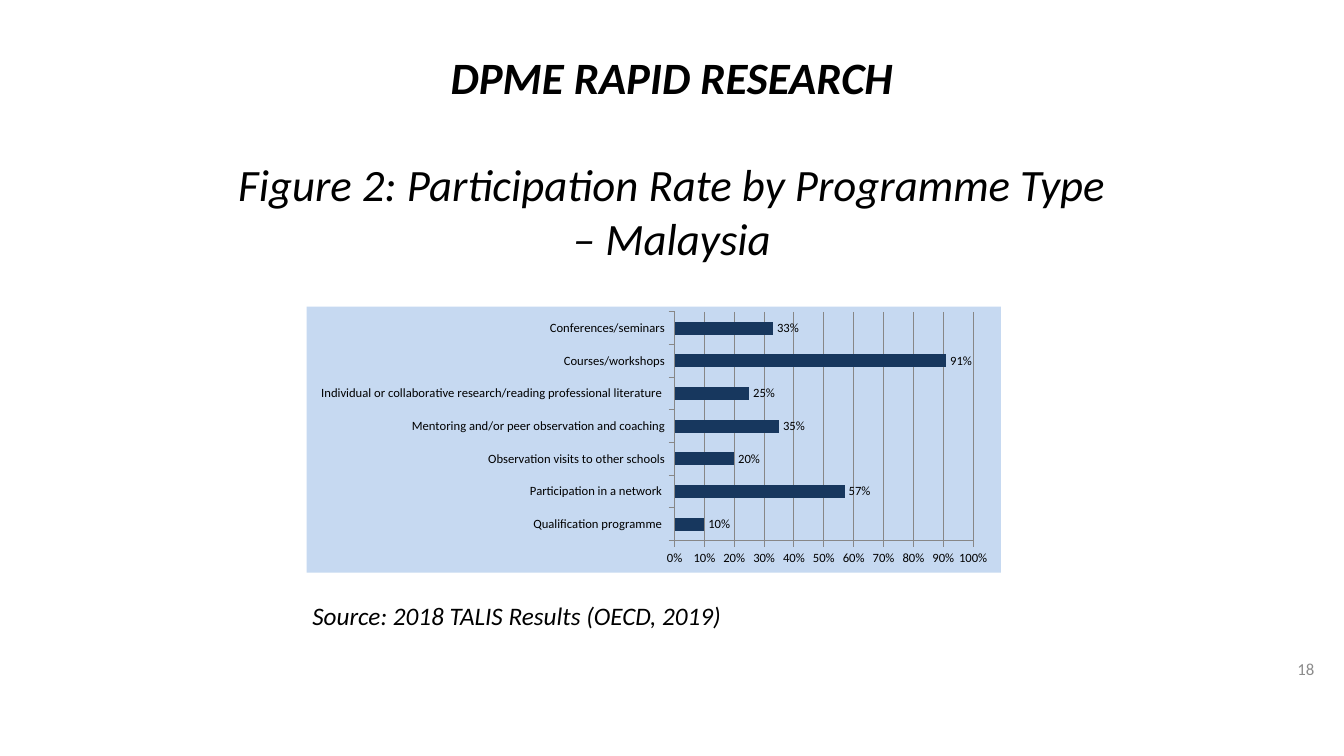
import pptx
import pptx.chart.data
import pptx.dml.color
import pptx.enum.chart
import pptx.enum.text
import pptx.oxml
import pptx.oxml.ns
import pptx.util

Pt = pptx.util.Pt
RGBColor = pptx.dml.color.RGBColor
ALIGN = pptx.enum.text.PP_ALIGN
ANCHOR = pptx.enum.text.MSO_ANCHOR

BLACK = RGBColor(0x00, 0x00, 0x00)
GREY = RGBColor(0x8C, 0x8C, 0x8C)
GRID = RGBColor(0x87, 0x87, 0x87)
NAVY = RGBColor(0x17, 0x37, 0x5E)
PALE_BLUE = RGBColor(0xC6, 0xD9, 0xF1)
FONT = "Calibri"

PARTICIPATION = [
    ("Qualification programme ", 0.10),
    ("Participation in a network ", 0.57),
    ("Observation visits to other schools", 0.20),
    ("Mentoring and/or peer observation and coaching", 0.35),
    ("Individual or collaborative research/reading professional literature ", 0.25),
    ("Courses/workshops", 0.91),
    ("Conferences/seminars", 0.33),
]


def set_font(font, size, color=BLACK, bold=False, italic=False):
    font.name = FONT
    font.size = Pt(size)
    font.color.rgb = color
    font.bold = bold
    font.italic = italic


def fill_title(title, heading, caption):
    title.left, title.top, title.width, title.height = Pt(156), Pt(21.6), Pt(648), Pt(181)
    text_frame = title.text_frame
    text_frame.text = f"{heading}\n{caption}"
    text_frame.word_wrap = True
    text_frame.auto_size = pptx.enum.text.MSO_AUTO_SIZE.NONE
    text_frame.vertical_anchor = ANCHOR.MIDDLE
    for paragraph, bold in zip(text_frame.paragraphs, (True, False)):
        paragraph.alignment = ALIGN.CENTER
        set_font(paragraph.runs[0].font, 32, bold=bold, italic=True)
    text_frame.paragraphs[1].space_before = Pt(38.4)


def add_text(slide, text, left, top, width, height, size, alignment, color=BLACK, italic=False):
    text_frame = slide.shapes.add_textbox(Pt(left), Pt(top), Pt(width), Pt(height)).text_frame
    text_frame.text = text
    text_frame.word_wrap = True
    text_frame.vertical_anchor = ANCHOR.MIDDLE
    paragraph = text_frame.paragraphs[0]
    paragraph.alignment = alignment
    set_font(paragraph.runs[0].font, size, color, italic=italic)


def style_axis(axis):
    axis.major_tick_mark = pptx.enum.chart.XL_TICK_MARK.OUTSIDE
    axis.minor_tick_mark = pptx.enum.chart.XL_TICK_MARK.NONE
    axis.format.line.color.rgb = GRID
    axis.format.line.width = Pt(0.75)


def set_chart_background(chart, color):
    area = pptx.oxml.parse_xml(
        f'<c:spPr {pptx.oxml.ns.nsdecls("c", "a")}><a:solidFill><a:srgbClr val="{color}"/>'
        "</a:solidFill><a:ln><a:noFill/></a:ln></c:spPr>"
    )
    chart.element.find(pptx.oxml.ns.qn("c:chart")).addnext(area)


def set_plot_layout(chart, x, y, width, height):
    plot_area = chart.element.find(".//" + pptx.oxml.ns.qn("c:plotArea"))
    for layout in plot_area.findall(pptx.oxml.ns.qn("c:layout")):
        plot_area.remove(layout)
    plot_area.insert(0, pptx.oxml.parse_xml(
        f'<c:layout {pptx.oxml.ns.nsdecls("c")}><c:manualLayout>'
        '<c:layoutTarget val="inner"/><c:xMode val="edge"/><c:yMode val="edge"/>'
        f'<c:x val="{x}"/><c:y val="{y}"/><c:w val="{width}"/><c:h val="{height}"/>'
        "</c:manualLayout></c:layout>"
    ))


def add_participation_chart(slide):
    data = pptx.chart.data.CategoryChartData(number_format="0%")
    data.categories = [programme for programme, _ in PARTICIPATION]
    data.add_series("Series 1", [rate for _, rate in PARTICIPATION])
    chart = slide.shapes.add_chart(
        pptx.enum.chart.XL_CHART_TYPE.BAR_CLUSTERED, Pt(219), Pt(219), Pt(496), Pt(190), data
    ).chart
    chart.has_title = False
    chart.has_legend = False
    set_font(chart.font, 9)
    set_chart_background(chart, PALE_BLUE)
    set_plot_layout(chart, 0.53, 0.02, 0.43, 0.86)

    # Axes
    style_axis(chart.category_axis)
    value_axis = chart.value_axis
    style_axis(value_axis)
    value_axis.minimum_scale, value_axis.maximum_scale = 0, 1
    value_axis.major_unit = 0.1
    value_axis.tick_labels.number_format = "0%"
    value_axis.tick_labels.number_format_is_linked = False
    value_axis.has_major_gridlines = True
    value_axis.major_gridlines.format.line.color.rgb = GRID
    value_axis.major_gridlines.format.line.width = Pt(0.75)

    # Bars and their labels
    plot = chart.plots[0]
    plot.gap_width = 150
    plot.vary_by_categories = False
    series = plot.series[0]
    series.format.fill.solid()
    series.format.fill.fore_color.rgb = NAVY
    labels = series.data_labels
    labels.show_value = True
    labels.number_format = "0%"
    labels.number_format_is_linked = False
    labels.position = pptx.enum.chart.XL_LABEL_POSITION.OUTSIDE_END
    set_font(labels.font, 9)


def main():
    presentation = pptx.Presentation()
    presentation.slide_width, presentation.slide_height = Pt(960), Pt(540)
    slide = presentation.slides.add_slide(presentation.slide_layouts[5])

    # Heading and figure caption
    fill_title(slide.shapes.title, "DPME RAPID RESEARCH",
               "Figure 2: Participation Rate by Programme Type – Malaysia")

    # Figure and its source
    add_participation_chart(slide)
    add_text(slide, "Source: 2018 TALIS Results (OECD, 2019)", 216, 425, 480, 29,
             18, ALIGN.JUSTIFY, italic=True)

    # Slide number
    add_text(slide, "18", 722, 463, 224, 29, 12, ALIGN.RIGHT, GREY)

    presentation.save("out.pptx")


if __name__ == "__main__":
    main()
